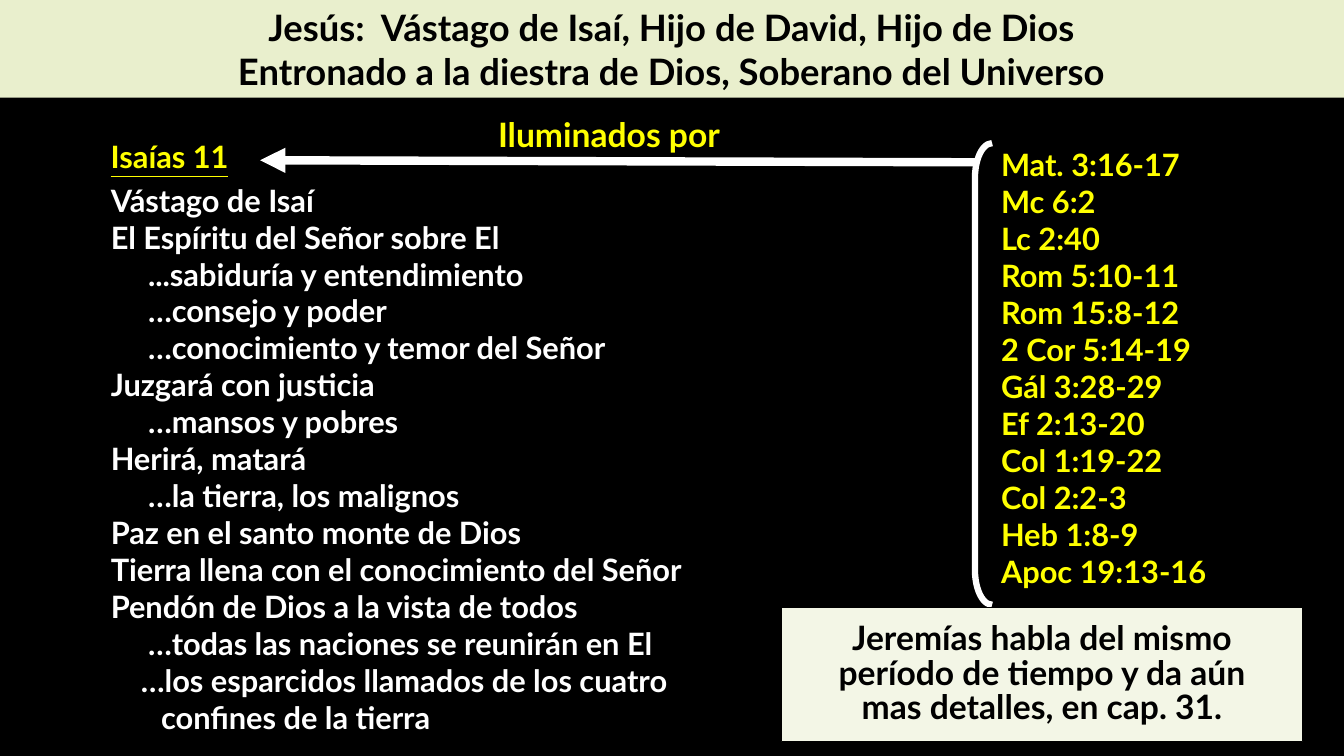
from dataclasses import dataclass

from lxml.etree import SubElement
from pptx import Presentation
from pptx.dml.color import RGBColor
from pptx.enum.shapes import MSO_CONNECTOR, MSO_SHAPE
from pptx.enum.text import MSO_ANCHOR, PP_ALIGN
from pptx.oxml.ns import qn
from pptx.util import Inches, Pt


@dataclass(frozen=True)
class Theme:
    font: str = "Lato"
    black: RGBColor = RGBColor(0, 0, 0)
    white: RGBColor = RGBColor(255, 255, 255)
    yellow: RGBColor = RGBColor(255, 255, 0)
    header: RGBColor = RGBColor(0xE9, 0xEF, 0xCD)
    note: RGBColor = RGBColor(0xF3, 0xF6, 0xE6)
    title_size: int = 26
    label_size: int = 24
    body_size: int = 22


THEME = Theme()

TITLE = [
    "Jesús:  Vástago de Isaí, Hijo de David, Hijo de Dios",
    "Entronado a la diestra de Dios, Soberano del Universo",
]
SUB = 0.37  # indent of a sub-point, in inches
PROPHECY = [
    (0, "Vástago de Isaí"),
    (0, "El Espíritu del Señor sobre El"),
    (SUB, "...sabiduría y entendimiento"),
    (SUB, "…consejo y poder"),
    (SUB, "…conocimiento y temor del Señor"),
    (0, "Juzgará con justicia"),
    (SUB, "…mansos y pobres"),
    (0, "Herirá, matará"),
    (SUB, "…la tierra, los malignos"),
    (0, "Paz en el santo monte de Dios"),
    (0, "Tierra llena con el conocimiento del Señor"),
    (0, "Pendón de Dios a la vista de todos"),
    (SUB, "…todas las naciones se reunirán en El"),
    (0.3, "…los esparcidos llamados de los cuatro"),
    (0.5, "confines de la tierra"),
]
REFERENCES = [
    "Mat. 3:16-17", "Mc 6:2", "Lc 2:40", "Rom 5:10-11",
    "Rom 15:8-12", "2 Cor 5:14-19", "Gál 3:28-29", "Ef 2:13-20",
    "Col 1:19-22", "Col 2:2-3", "Heb 1:8-9", "Apoc 19:13-16",
]
NOTE = [
    "Jeremías habla del mismo",
    "período de tiempo y da aún",
    "mas detalles, en cap. 31.",
]


def write_lines(tf, lines, size, color, align=PP_ALIGN.LEFT, spacing=None,
                underline=None):
    """Write one paragraph per line; a line is text or (indent, text)."""
    for i, line in enumerate(lines):
        indent, text = line if isinstance(line, tuple) else (0, line)
        p = tf.paragraphs[0] if i == 0 else tf.add_paragraph()
        p.alignment = align
        if spacing:
            p.line_spacing = spacing
        if indent:
            p._p.get_or_add_pPr().set("marL", str(Inches(indent)))
        r = p.add_run()
        r.text = text
        r.font.name = THEME.font
        r.font.size = Pt(size)
        r.font.bold = True
        r.font.underline = underline
        r.font.color.rgb = color


def add_text(s, box, lines, size, color, **style):
    tf = s.shapes.add_textbox(*map(Inches, box)).text_frame
    tf.word_wrap = True
    write_lines(tf, lines, size, color, **style)


def add_panel(s, box, fill, lines, size, line=None, wrap=True, spacing=None):
    sp = s.shapes.add_shape(MSO_SHAPE.RECTANGLE, *map(Inches, box))
    sp.shadow.inherit = False
    sp.fill.solid()
    sp.fill.fore_color.rgb = fill
    if line is None:
        sp.line.fill.background()
    else:
        sp.line.color.rgb = line
        sp.line.width = Pt(0.75)
    tf = sp.text_frame
    tf.word_wrap = wrap
    tf.vertical_anchor = MSO_ANCHOR.MIDDLE
    write_lines(tf, lines, size, THEME.black, PP_ALIGN.CENTER, spacing)


def add_bracket(s, box):
    sp = s.shapes.add_shape(MSO_SHAPE.LEFT_BRACKET, *map(Inches, box))
    sp.shadow.inherit = False
    sp.adjustments[0] = 2.03
    sp.fill.background()
    sp.line.color.rgb = THEME.white
    sp.line.width = Pt(4.5)


def add_arrow(s, start, end):
    arrow = s.shapes.add_connector(
        MSO_CONNECTOR.STRAIGHT, *map(Inches, start + end))
    arrow.line.color.rgb = THEME.white
    arrow.line.width = Pt(6)
    SubElement(arrow.line._get_or_add_ln(), qn("a:tailEnd"), type="triangle")
    SubElement(arrow._element.spPr, qn("a:effectLst"))


def main():
    prs = Presentation()
    prs.slide_width, prs.slide_height = Inches(13.33), Inches(7.5)
    s = prs.slides.add_slide(prs.slide_layouts[6])
    s.background.fill.solid()
    s.background.fill.fore_color.rgb = THEME.black

    add_text(s, (1, 1.36, 2.17, 0.44), ["Isaías 11"], THEME.body_size,
             THEME.yellow, spacing=0.9, underline=True)
    add_text(s, (1, 1.75, 7.42, 5.65), PROPHECY, THEME.body_size, THEME.white)
    add_text(s, (9.83, 1.4, 2.92, 4.54), REFERENCES, THEME.body_size,
             THEME.yellow)
    add_bracket(s, (9.67, 1.42, 0.17, 4.58))
    add_text(s, (4.58, 1.08, 2.92, 0.5), ["Iluminados por"], THEME.label_size,
             THEME.yellow, align=PP_ALIGN.CENTER)
    add_panel(s, (0, 0, 13.33, 0.97), THEME.header, TITLE, THEME.title_size)
    add_arrow(s, (9.67, 1.61), (2.58, 1.59))
    add_panel(s, (7.75, 6.03, 5.17, 1.33), THEME.note, NOTE, THEME.label_size,
              line=THEME.black, wrap=False, spacing=0.85)

    prs.save("out.pptx")


if __name__ == "__main__":
    main()
